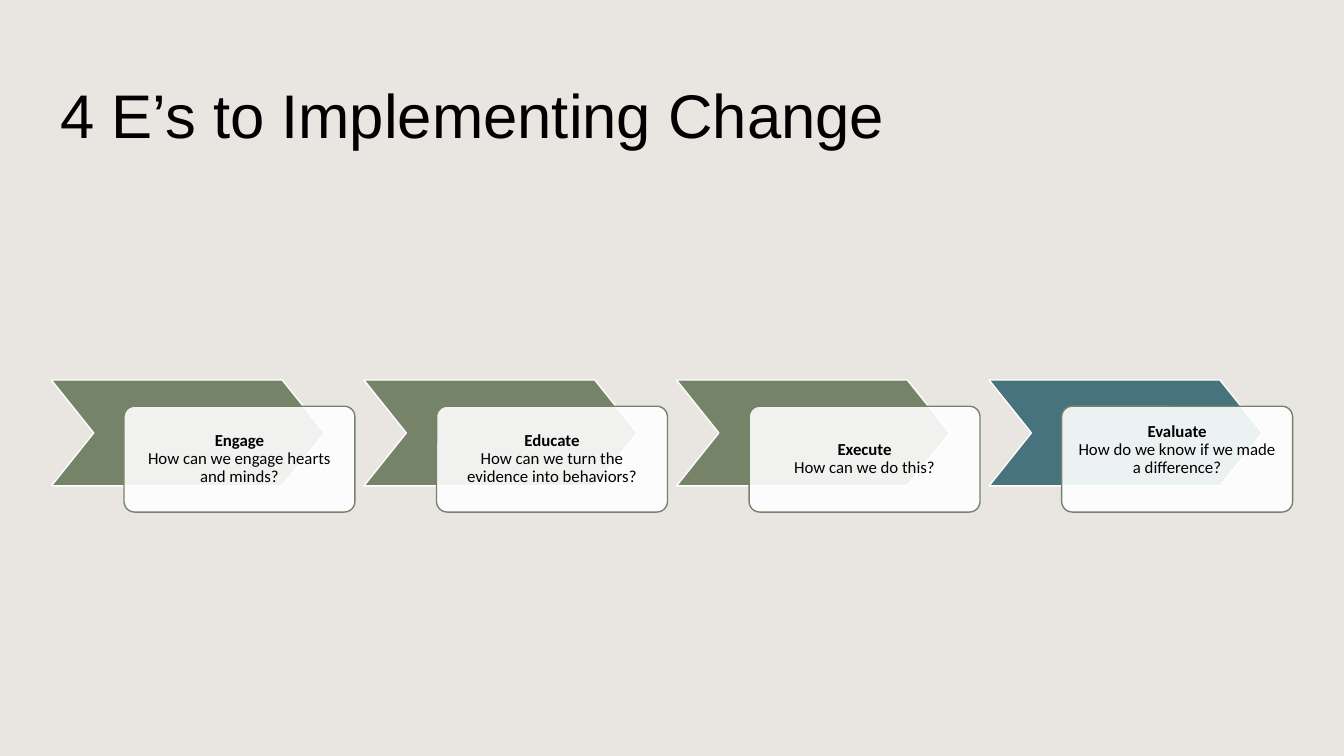
from lxml import etree
from pptx import Presentation
from pptx.dml.color import RGBColor
from pptx.enum.shapes import MSO_SHAPE
from pptx.enum.text import MSO_ANCHOR, PP_ALIGN
from pptx.oxml.ns import qn
from pptx.util import Inches, Pt

CHEVRON = MSO_SHAPE.CHEVRON
ROUNDED = MSO_SHAPE.ROUNDED_RECTANGLE
MIDDLE = MSO_ANCHOR.MIDDLE
CENTER = PP_ALIGN.CENTER

COLORS = {
    "background": "E9E5E1",
    "green": "758468",
    "teal": "46737E",
    "white": "FFFFFF",
    "black": "000000",
}
TITLE = "4 E’s to Implementing Change"
STEPS = [
    ("Engage", "How can we engage hearts and minds?", "green", 0),
    ("Educate", "How can we turn the evidence into behaviors?", "green", 0),
    ("Execute", "How can we do this?", "green", 0),
    ("Evaluate", "How do we know if we made a difference?", "teal", 0.18),
]

SLIDE_WIDTH, SLIDE_HEIGHT = 13.33, 7.5
ROW_LEFT, ROW_TOP, COLUMN_STEP = 0.51, 3.77, 3.1
CHEVRON_WIDTH, CARD_WIDTH, STEP_HEIGHT = 2.71, 2.29, 1.05
CARD_SHIFT_X, CARD_SHIFT_Y = 0.72, 0.26
INSET = 0.09


def color(name):
    return RGBColor.from_string(COLORS[name])


def add_panel(slide, preset, box, adjustment, fill, line):
    shape = slide.shapes.add_shape(preset, *map(Inches, box))
    shape.adjustments[0] = adjustment
    shape.shadow.inherit = False
    shape.fill.solid()
    shape.fill.fore_color.rgb = color(fill)
    shape.line.color.rgb = color(line)
    shape.line.width = Pt(1)
    return shape


def set_opacity(shape, percent):
    fill_color = shape.fill._xPr.find(qn("a:solidFill"))[0]
    etree.SubElement(fill_color, qn("a:alpha")).set("val", str(percent * 1000))


def style_font(paragraph, name, size):
    paragraph.font.name = name
    paragraph.font.size = Pt(size)
    paragraph.font.color.rgb = color("black")


def add_title(slide):
    box = slide.shapes.add_textbox(*map(Inches, (0.5, 0.4, 11.92, 1.45)))
    frame = box.text_frame
    frame.word_wrap = True
    frame.vertical_anchor = MIDDLE
    paragraph = frame.paragraphs[0]
    paragraph.text = TITLE
    style_font(paragraph, "Arial", 44)


def add_step(slide, column, heading, question, fill, lift):
    left = ROW_LEFT + column * COLUMN_STEP
    add_panel(slide, CHEVRON, (left, ROW_TOP, CHEVRON_WIDTH, STEP_HEIGHT), 0.4, fill, "white")
    card_box = (left + CARD_SHIFT_X, ROW_TOP + CARD_SHIFT_Y, CARD_WIDTH, STEP_HEIGHT)
    card = add_panel(slide, ROUNDED, card_box, 0.1, "white", "green")
    set_opacity(card, 90)

    frame = card.text_frame
    frame.word_wrap = True
    frame.vertical_anchor = MIDDLE
    frame.margin_left = frame.margin_right = frame.margin_top = Inches(INSET)
    frame.margin_bottom = Inches(INSET + lift)
    paragraph = frame.paragraphs[0]
    paragraph.alignment = CENTER
    paragraph.line_spacing = 0.9
    style_font(paragraph, "Calibri", 12)
    heading_run = paragraph.add_run()
    heading_run.text = heading
    heading_run.font.bold = True
    paragraph.add_line_break()
    paragraph.add_run().text = question


def main():
    presentation = Presentation()
    presentation.slide_width = Inches(SLIDE_WIDTH)
    presentation.slide_height = Inches(SLIDE_HEIGHT)
    slide = presentation.slides.add_slide(presentation.slide_layouts[6])
    slide.background.fill.solid()
    slide.background.fill.fore_color.rgb = color("background")
    add_title(slide)
    for column, step in enumerate(STEPS):
        add_step(slide, column, *step)
    presentation.save("out.pptx")


if __name__ == "__main__":
    main()
